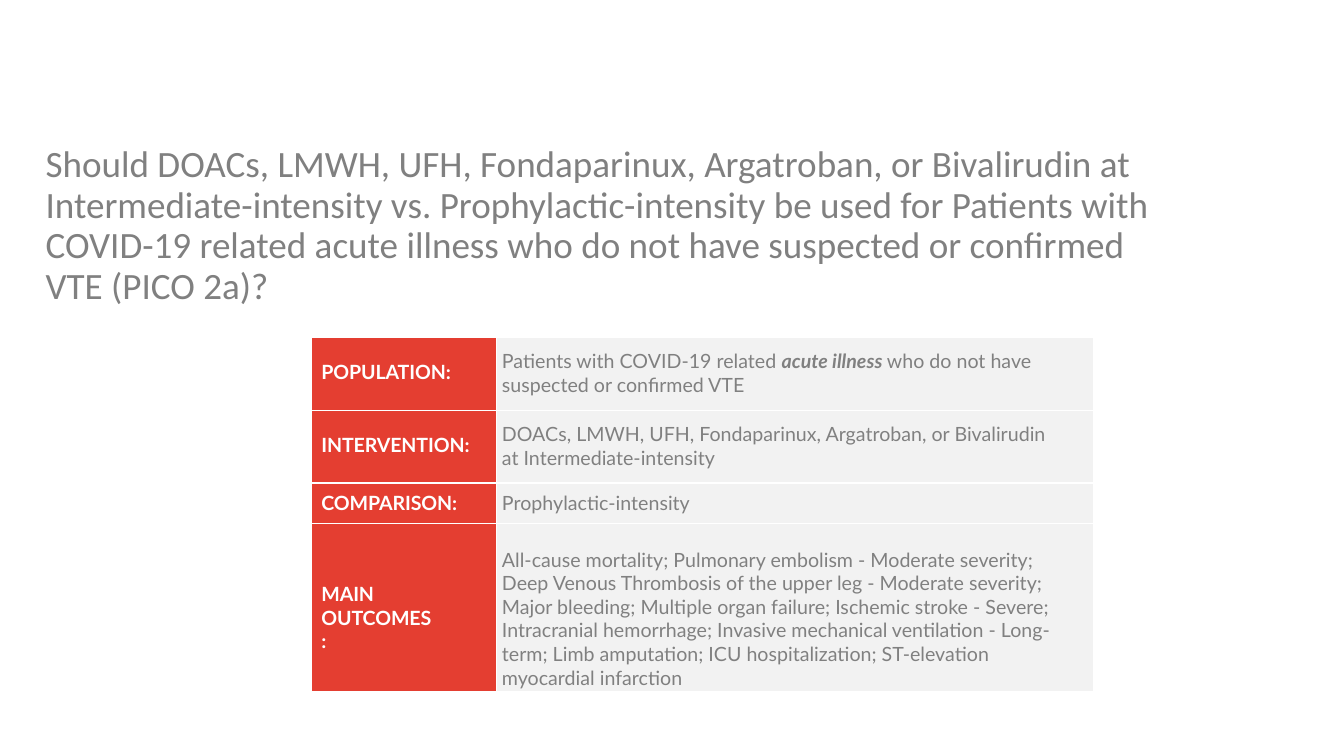
from lxml import etree
from pptx import Presentation
from pptx import util as u
from pptx.dml.color import RGBColor
from pptx.enum import text
from pptx.oxml import ns

Cm, Pt = u.Cm, u.Pt

HUES = {"red": "E43E31", "pale": "F2F2F2", "grey": "808080", "white": "FFFFFF"}

TITLE = ("Should DOACs, LMWH, UFH, Fondaparinux, Argatroban, or Bivalirudin at "
         "Intermediate-intensity vs. Prophylactic-intensity be used for Patients "
         "with COVID-19 related acute illness who do not have suspected or "
         "confirmed VTE (PICO 2a)?")

HEAD = {"name": "Calibri", "size": Pt(26.5)}
LABEL = {"name": "Lato", "size": Pt(14), "bold": True}
BODY = {"name": "Lato", "size": Pt(14), "bold": False}
STRESS = {**BODY, "bold": True, "italic": True}

COLS = (4.67, 15.04)
# Row height, then for label and answer: text runs, top inset, right inset (cm)
ROWS = [
    (1.83,
     ([("POPULATION:", LABEL)], 0.57, 0),
     ([("Patients with COVID-19 related ", BODY), ("acute illness ", STRESS),
       ("who do not have suspected or confirmed VTE", BODY)], 0.3, 0.9)),
    (1.83,
     ([("INTERVENTION:", LABEL)], 0.57, 0),
     ([("DOACs, LMWH, UFH, Fondaparinux, Argatroban, or Bivalirudin at "
        "Intermediate-intensity", BODY)], 0.3, 0.9)),
    (1.02,
     ([("COMPARISON:", LABEL)], 0.2, 0),
     ([("Prophylactic-intensity", BODY)], 0.2, 0)),
    (4.24,
     ([("MAIN OUTCOMES:", LABEL)], 1.48, 1.57),
     ([("All-cause mortality; Pulmonary embolism - Moderate severity; Deep "
        "Venous Thrombosis of the upper leg - Moderate severity; Major "
        "bleeding; Multiple organ failure; Ischemic stroke - Severe; "
        "Intracranial hemorrhage; Invasive mechanical ventilation - Long-term; "
        "Limb amputation; ICU hospitalization; ST-elevation myocardial "
        "infarction", BODY)], 0.62, 0.3)),
]


def hue(key):
    return RGBColor.from_string(HUES[key])


def apply(item, attrs):
    for name, value in attrs.items():
        setattr(item, name, value)


def write(para, runs, tint, track=0):
    for words, style in runs:
        run = para.add_run()
        run.text = words
        apply(run.font, style)
        run.font.color.rgb = hue(tint)
        if track:
            run.font._element.set("spc", str(track))


def edge(cell):
    """Draw a thin white line on every side of a cell."""
    props = cell._tc.get_or_add_tcPr()
    for side in ("lnL", "lnR", "lnT", "lnB"):
        line = etree.SubElement(props, ns.qn("a:" + side), w=str(Pt(1)))
        fill = etree.SubElement(line, ns.qn("a:solidFill"))
        etree.SubElement(fill, ns.qn("a:srgbClr"), val=HUES["white"])


def add_title(slide):
    box = slide.shapes.add_textbox(Cm(1.12), Cm(3.51), Cm(28.7), Cm(4.24))
    frame = box.text_frame
    apply(frame, {"word_wrap": True, "margin_left": Cm(0.03), "margin_right": 0,
                  "margin_top": Cm(0.15), "margin_bottom": 0})
    para = frame.paragraphs[0]
    para.line_spacing = 0.91
    write(para, [(TITLE, HEAD)], "grey")


def fill_cell(cell, part, left, back, tint, track):
    runs, top, right = part
    apply(cell, {"margin_left": Cm(left), "margin_right": Cm(right),
                 "margin_top": Cm(top), "margin_bottom": 0,
                 "vertical_anchor": text.MSO_ANCHOR.TOP})
    edge(cell)
    cell.fill.solid()
    cell.fill.fore_color.rgb = hue(back)
    write(cell.text_frame.paragraphs[0], runs, tint, track)


def add_grid(slide):
    high = sum(row[0] for row in ROWS)
    frame = slide.shapes.add_table(len(ROWS), len(COLS), Cm(7.85), Cm(8.51),
                                   Cm(sum(COLS)), Cm(high))
    grid = frame.table
    apply(grid, {"first_row": False, "horz_banding": False})
    for col, width in zip(grid.columns, COLS):
        col.width = Cm(width)
    for row, (height, label, answer) in zip(grid.rows, ROWS):
        row.height = Cm(height)
        fill_cell(row.cells[0], label, 0.25, "red", "white", -10)
        fill_cell(row.cells[1], answer, 0.13, "pale", "grey", 0)


def main():
    deck = Presentation()
    apply(deck, {"slide_width": Cm(33.87), "slide_height": Cm(19.05)})
    slide = deck.slides.add_slide(deck.slide_layouts[6])
    # Question
    add_title(slide)
    # PICO table
    add_grid(slide)
    deck.save("out.pptx")


if __name__ == "__main__":
    main()
